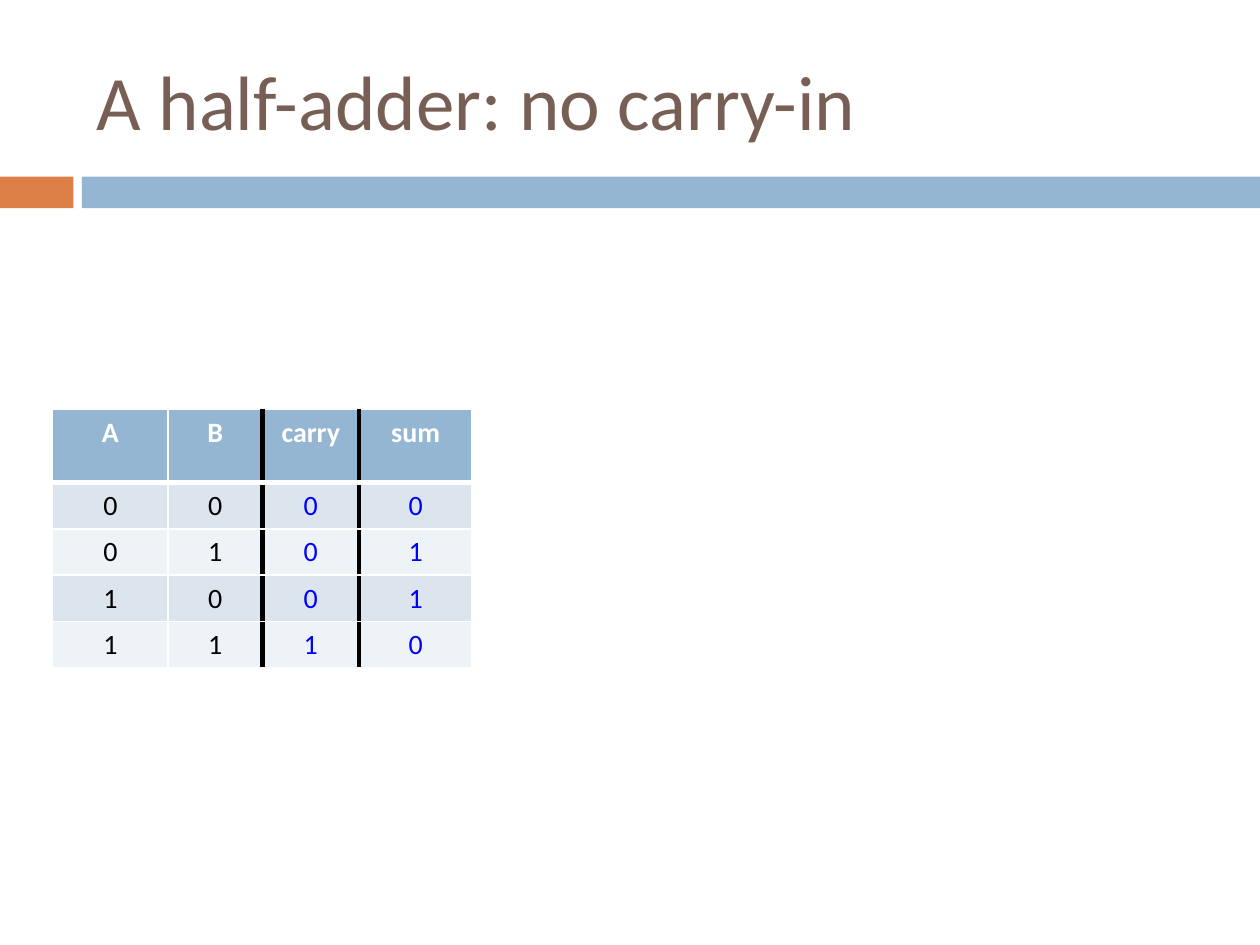
import pptx
import pptx.dml.color
import pptx.enum.shapes
import pptx.enum.text
import pptx.oxml
import pptx.oxml.ns
import pptx.util

Cm, Pt = pptx.util.Cm, pptx.util.Pt
FONT = "Calibri"
WHITE, BLACK, BLUE = "FFFFFF", "000000", "0000FF"
ORANGE, STEEL, BROWN = "DD8047", "94B6D2", "775F55"
BANDS = ("DCE5EE", "EEF3F7")

HEADER = ("A", "B", "carry", "sum")
INPUTS = ((0, 0), (0, 1), (1, 0), (1, 1))
COLUMN_WIDTHS = (2.33, 1.9, 1.95, 2.28)
HEADER_HEIGHT, ROW_HEIGHT = 1.47, 0.87


def rgb(color):
    return pptx.dml.color.RGBColor.from_string(color)


def format_text(p, size, color, bold=False):
    for r in p.runs:
        r.font.name = FONT
        r.font.size = Pt(size)
        r.font.bold = bold
        r.font.color.rgb = rgb(color)


def add_bar(slide, left, width, color):
    s = slide.shapes.add_shape(pptx.enum.shapes.MSO_SHAPE.RECTANGLE,
                               Cm(left), Cm(3.56), Cm(width), Cm(0.64))
    s.shadow.inherit = False
    s.fill.solid()
    s.fill.fore_color.rgb = rgb(color)
    s.line.fill.background()


def add_title(slide, text):
    s = slide.shapes.add_textbox(Cm(1.7), Cm(0.64), Cm(22.66), Cm(2.74))
    tf = s.text_frame
    tf.word_wrap = True
    tf.vertical_anchor = pptx.enum.text.MSO_ANCHOR.MIDDLE
    tf.text = text
    format_text(tf.paragraphs[0], 44, BROWN)


def set_border(cell, side, color, points):
    """Draw one side of a cell; call for L, R, T, B in that order."""
    ln = pptx.oxml.parse_xml(
        f'<a:ln{side} {pptx.oxml.ns.nsdecls("a")} w="{Pt(points)}">'
        f'<a:solidFill><a:srgbClr val="{color}"/></a:solidFill></a:ln{side}>')
    cell._tc.get_or_add_tcPr().append(ln)


def format_cell(cell, row, col):
    is_header = row == 0
    is_output = col >= 2
    thick, thin = (BLACK, 3), (WHITE, 1)
    set_border(cell, "L", *(thick if is_output else thin))
    set_border(cell, "R", *(thick if col in (1, 2) else thin))
    set_border(cell, "T", WHITE, 3 if row == 1 else 1)
    set_border(cell, "B", WHITE, 3 if is_header else 1)
    cell.fill.solid()
    cell.fill.fore_color.rgb = rgb(STEEL if is_header else BANDS[(row - 1) % 2])
    p = cell.text_frame.paragraphs[0]
    p.alignment = pptx.enum.text.PP_ALIGN.CENTER
    color = WHITE if is_header else BLUE if is_output else BLACK
    format_text(p, 16, color, bold=is_header)


def add_truth_table(slide):
    rows = [HEADER] + [(a, b, a & b, a ^ b) for a, b in INPUTS]
    heights = [HEADER_HEIGHT] + [ROW_HEIGHT] * len(INPUTS)
    table = slide.shapes.add_table(
        len(rows), len(HEADER), Cm(1.06), Cm(8.26),
        Cm(sum(COLUMN_WIDTHS)), Cm(sum(heights))).table
    for column, width in zip(table.columns, COLUMN_WIDTHS):
        column.width = Cm(width)
    for i, (values, height) in enumerate(zip(rows, heights)):
        table.rows[i].height = Cm(height)
        for j, value in enumerate(values):
            cell = table.cell(i, j)
            cell.text_frame.text = str(value)
            format_cell(cell, i, j)


def main():
    prs = pptx.Presentation()
    prs.slide_width, prs.slide_height = Cm(25.4), Cm(19.05)
    slide = prs.slides.add_slide(prs.slide_layouts[6])
    add_bar(slide, 0, 1.48, ORANGE)
    add_bar(slide, 1.65, 23.75, STEEL)
    add_title(slide, "A half-adder: no carry-in")
    add_truth_table(slide)
    prs.save("out.pptx")


if __name__ == "__main__":
    main()
